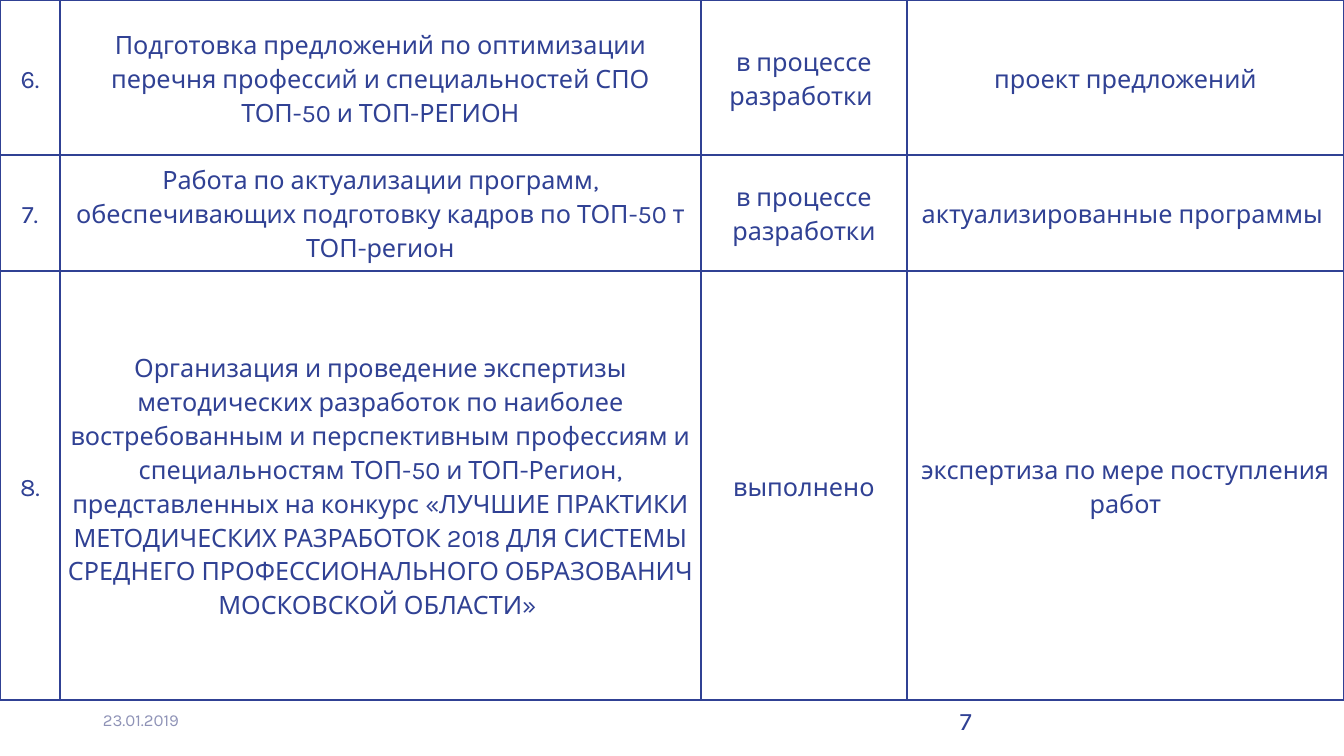
"""Build the task status table slide with its date and page number."""
from dataclasses import dataclass

from lxml import etree
from pptx import Presentation
from pptx import util as u
from pptx.dml.color import RGBColor
from pptx.enum import text as t
from pptx.oxml.ns import qn

ROWS = [
    ("6.",
     "Подготовка предложений по оптимизации перечня профессий и "
     "специальностей СПО ТОП-50 и ТОП-РЕГИОН",
     "в процессе разработки ",
     "проект предложений"),
    ("7.",
     "Работа по актуализации программ, обеспечивающих подготовку кадров "
     "по ТОП-50 т ТОП-регион",
     "в процессе разработки",
     "актуализированные программы "),
    ("8.",
     "Организация и проведение экспертизы методических разработок по "
     "наиболее востребованным и перспективным профессиям и специальностям "
     "ТОП-50 и ТОП-Регион, представленных на конкурс «ЛУЧШИЕ ПРАКТИКИ "
     "МЕТОДИЧЕСКИХ РАЗРАБОТОК 2018 ДЛЯ СИСТЕМЫ СРЕДНЕГО "
     "ПРОФЕССИОНАЛЬНОГО ОБРАЗОВАНИЧ МОСКОВСКОЙ ОБЛАСТИ» ",
     "выполнено",
     "экспертиза по мере поступления работ"),
]
DATE, PAGE = "23.01.2019", "7"
WIDE, HIGH = 1344, 756
COLS = [60, 641, 206, 437]
TALL = [155, 116, 429]
FOOT = {"date": 93, "page": 950}
FOOT_W, FOOT_H = 302, 40
PAD = 7


@dataclass(frozen=True)
class Theme:
    font: str = "Karla"
    ink: str = "304194"
    pale: str = "8F93B7"
    body: int = 18
    small: int = 12
    rule: int = 1


LOOK = Theme()


def px(n):
    return u.Emu(round(n * 914400 / 100.8))


def write(frame, words, size=LOOK.body, color=LOOK.ink, align=None, lead=None):
    frame.word_wrap = True
    para = frame.paragraphs[0]
    para.alignment = align
    para.line_spacing = lead
    run = para.add_run()
    run.text = words
    run.font.name = LOOK.font
    run.font.size = u.Pt(size)
    run.font.color.rgb = RGBColor.from_string(color)


def edge(cell):
    props = cell._tc.get_or_add_tcPr()
    for i, side in enumerate(("lnL", "lnR", "lnT", "lnB")):
        line = etree.Element(qn("a:" + side), w=str(u.Pt(LOOK.rule)))
        fill = etree.SubElement(line, qn("a:solidFill"))
        etree.SubElement(fill, qn("a:srgbClr"), val=LOOK.ink)
        props.insert(i, line)


def grid(slide):
    frame = slide.shapes.add_table(len(TALL), len(COLS), 0, 0,
                                   px(sum(COLS)), px(sum(TALL)))
    table = frame.table
    table.first_row = table.horz_banding = False
    for col, wide in zip(table.columns, COLS):
        col.width = px(wide)
    for row, tall, words in zip(table.rows, TALL, ROWS):
        row.height = px(tall)
        for cell, item in zip(row.cells, words):
            cell.margin_left = cell.margin_right = px(PAD)
            cell.margin_top = cell.margin_bottom = 0
            cell.vertical_anchor = t.MSO_ANCHOR.MIDDLE
            cell.fill.background()
            edge(cell)
            write(cell.text_frame, item, align=t.PP_ALIGN.CENTER, lead=1.15)


def foot(slide, left, words, anchor=t.MSO_ANCHOR.TOP, **form):
    box = slide.shapes.add_textbox(px(left), px(sum(TALL)),
                                   px(FOOT_W), px(FOOT_H))
    box.text_frame.vertical_anchor = anchor
    write(box.text_frame, words, **form)


def main():
    deck = Presentation()
    deck.slide_width, deck.slide_height = px(WIDE), px(HIGH)
    slide = deck.slides.add_slide(deck.slide_layouts[6])
    foot(slide, FOOT["date"], DATE, anchor=t.MSO_ANCHOR.MIDDLE,
         size=LOOK.small, color=LOOK.pale)
    foot(slide, FOOT["page"], PAGE)
    grid(slide)
    deck.save("out.pptx")


if __name__ == "__main__":
    main()
